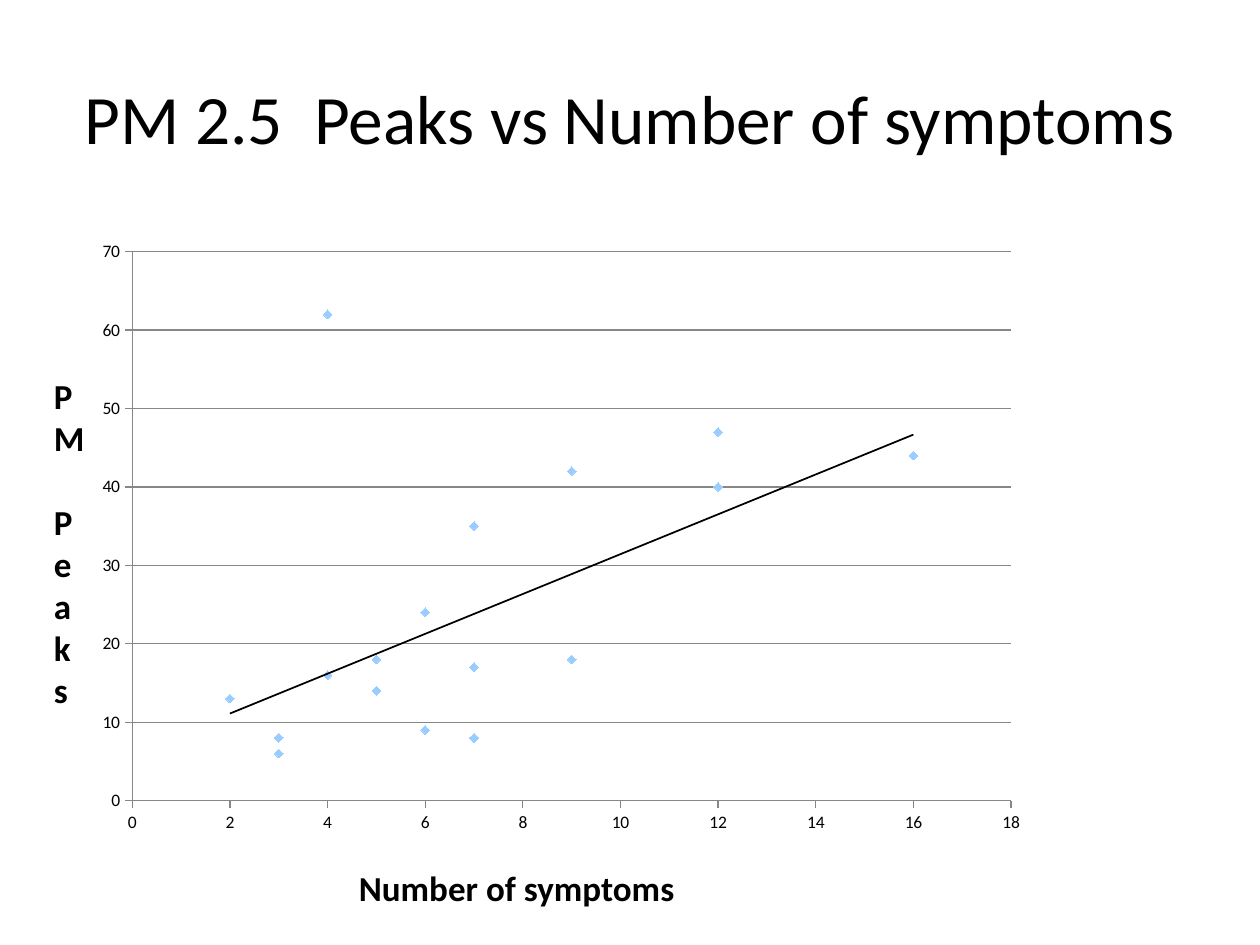
from dataclasses import dataclass

from lxml import etree
from pptx import Presentation
from pptx import util as u
from pptx.chart.data import XyChartData
from pptx.dml.color import RGBColor
from pptx.enum import chart as charts, text
from pptx.oxml import parse_xml
from pptx.oxml.ns import nsdecls, qn

EMU_PER_PX = 9144
FONT = "Calibri"
BLACK = "000000"
GRAY = "878787"
MARKER_BLUE = "99CCFF"

POINTS = [
    (16, 44), (5, 14), (7, 8), (7, 17), (5, 18), (6, 24), (4, 62),
    (4, 16), (2, 13), (9, 42), (9, 18), (12, 47), (12, 40), (3, 8),
    (7, 8), (6, 9), (3, 8), (3, 6), (7, 35),
]


@dataclass
class Box:
    left: int
    top: int
    width: int
    height: int

    def emu(self) -> list[int]:
        return [px(n) for n in (self.left, self.top, self.width, self.height)]


@dataclass
class AxisLabel:
    box: Box
    lines: list[str]


@dataclass
class AxisScale:
    maximum: int
    step: int


AXIS_LABELS = [
    AxisLabel(Box(275, 683, 317, 44), ["Number of symptoms"]),
    AxisLabel(Box(33, 292, 42, 279), ["PM", " Peaks"]),
]


def px(length: int) -> int:
    return u.Emu(length * EMU_PER_PX)


def color(value: str) -> RGBColor:
    return RGBColor.from_string(value)


def style_font(font, size: float, bold: bool = False) -> None:
    font.name = FONT
    font.size = u.Pt(size)
    font.bold = bold
    font.color.rgb = color(BLACK)


def style_line(line, value: str) -> None:
    line.color.rgb = color(value)
    line.width = u.Pt(0.75)


def add_run(paragraph, words: str, size: float, bold: bool = False) -> None:
    run = paragraph.add_run()
    run.text = words
    style_font(run.font, size, bold)


def set_title(slide, words: str) -> None:
    title = slide.shapes.title
    title.left, title.top, title.width, title.height = Box(50, 30, 900, 125).emu()
    frame = title.text_frame
    frame.auto_size = text.MSO_AUTO_SIZE.NONE
    frame.vertical_anchor = text.MSO_ANCHOR.MIDDLE
    paragraph = frame.paragraphs[0]
    paragraph.alignment = text.PP_ALIGN.CENTER
    add_run(paragraph, words, 39.6)


def add_axis_label(slide, label: AxisLabel) -> None:
    shape = slide.shapes.add_textbox(*label.box.emu())
    frame = shape.text_frame
    frame.word_wrap = True
    frame.auto_size = text.MSO_AUTO_SIZE.SHAPE_TO_FIT_TEXT
    for index, line in enumerate(label.lines):
        paragraph = frame.add_paragraph() if index else frame.paragraphs[0]
        add_run(paragraph, line, 20, True)


def style_axis(axis, scale: AxisScale, gridlines: bool) -> None:
    axis.minimum_scale = 0
    axis.maximum_scale = scale.maximum
    axis.major_unit = scale.step
    axis.major_tick_mark = charts.XL_TICK_MARK.OUTSIDE
    axis.minor_tick_mark = charts.XL_TICK_MARK.NONE
    axis.has_major_gridlines = gridlines
    style_line(axis.format.line, GRAY)
    if gridlines:
        style_line(axis.major_gridlines.format.line, GRAY)
    style_font(axis.tick_labels.font, 10)


def add_trendline(series) -> None:
    trendline = parse_xml(
        f'<c:trendline {nsdecls("c", "a")}>'
        f'<c:spPr><a:ln w="12700"><a:solidFill><a:srgbClr val="{BLACK}"/>'
        "</a:solidFill></a:ln></c:spPr>"
        '<c:trendlineType val="linear"/><c:dispRSqr val="0"/>'
        '<c:dispEq val="0"/></c:trendline>'
    )
    series._element.find(qn("c:xVal")).addprevious(trendline)


def set_plot_layout(chart, fractions: dict[str, float]) -> None:
    plot_area = chart._chartSpace.chart.plotArea
    for old_layout in plot_area.findall(qn("c:layout")):
        plot_area.remove(old_layout)
    layout = etree.Element(qn("c:layout"))
    manual = etree.SubElement(layout, qn("c:manualLayout"))
    settings = {"layoutTarget": "inner", "xMode": "edge", "yMode": "edge"}
    for name, value in (settings | fractions).items():
        etree.SubElement(manual, qn(f"c:{name}"), val=str(value))
    plot_area.insert(0, layout)


def add_scatter(slide, box: Box) -> None:
    data = XyChartData()
    points = data.add_series("Series 1")
    for symptoms, peak in POINTS:
        points.add_data_point(symptoms, peak)
    chart = slide.shapes.add_chart(
        charts.XL_CHART_TYPE.XY_SCATTER, *box.emu(), data
    ).chart
    chart.has_title = False
    chart.has_legend = False
    style_font(chart.font, 10)
    chart.plots[0].vary_by_categories = False
    style_axis(chart.category_axis, AxisScale(18, 2), False)
    style_axis(chart.value_axis, AxisScale(70, 10), True)

    series = chart.plots[0].series[0]
    series.format.line.fill.background()
    marker = series.marker
    marker.style = charts.XL_MARKER_STYLE.DIAMOND
    marker.size = 5
    marker.format.fill.solid()
    marker.format.fill.fore_color.rgb = color(MARKER_BLUE)
    marker.format.line.color.rgb = color(MARKER_BLUE)
    add_trendline(series)
    set_plot_layout(chart, {"x": 0.04, "y": 0.11, "w": 0.93, "h": 0.83})


def main() -> None:
    presentation = Presentation()
    presentation.slide_width = px(1000)
    presentation.slide_height = px(750)
    slide = presentation.slides.add_slide(presentation.slide_layouts[5])
    set_title(slide, "PM 2.5  Peaks vs Number of symptoms")
    add_scatter(slide, Box(75, 142, 750, 525))
    for label in AXIS_LABELS:
        add_axis_label(slide, label)
    presentation.save("out.pptx")


if __name__ == "__main__":
    main()
